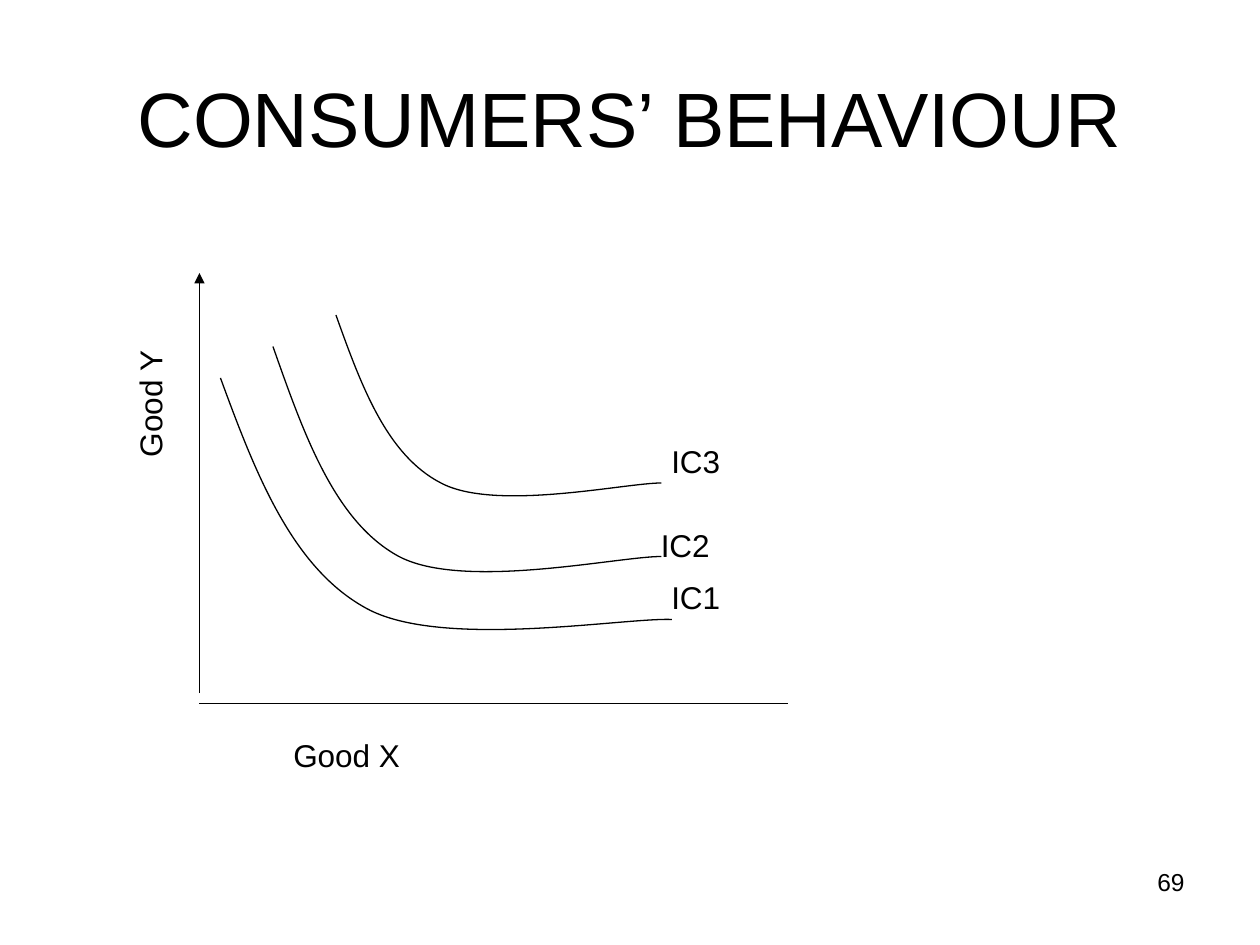
from pptx import Presentation
from pptx.util import Emu, Pt
from pptx.dml.color import RGBColor
from pptx.enum.shapes import MSO_CONNECTOR
from pptx.enum.text import PP_ALIGN, MSO_ANCHOR, MSO_AUTO_SIZE
from pptx.oxml.ns import qn
from lxml.etree import SubElement

SCALE = 914400 // 144
COLORS = {"ink": "000000", "paper": "FFFFFF"}


def px(n):
    return Emu(n * SCALE)


def style_line(sp):
    sp.line.color.rgb = RGBColor.from_string(COLORS["ink"])
    sp.line.width = Pt(0.75)


prs = Presentation()
prs.slide_width, prs.slide_height = px(1440), px(1080)
s = prs.slides.add_slide(prs.slide_layouts[6])
s.background.fill.solid()
s.background.fill.fore_color.rgb = RGBColor.from_string(COLORS["paper"])

texts = [
    ("69", 1032, 984, 336, 75, 14, PP_ALIGN.RIGHT, MSO_ANCHOR.TOP, True, 0),
    ("CONSUMERS’ BEHAVIOUR", 72, 43, 1296, 180, 44, PP_ALIGN.CENTER, MSO_ANCHOR.MIDDLE, True, 0),
]
labels = [
    ("IC1", 753, 654, 85, 0),
    ("IC2", 741, 594, 85, 0),
    ("IC3", 753, 498, 85, 0),
    ("Good X", 321, 834, 151, 0),
    ("Good Y", 96, 432, 151, 270),
]
for text, x, y, w, angle in labels:
    texts.append((text, x, y, w, 58, 18, PP_ALIGN.LEFT, MSO_ANCHOR.TOP, False, angle))

for text, x, y, w, h, size, align, anchor, wrap, angle in texts:
    sp = s.shapes.add_textbox(px(x), px(y), px(w), px(h))
    sp.rotation = angle
    tf = sp.text_frame
    tf.word_wrap = wrap
    tf.vertical_anchor = anchor
    if not wrap:
        tf.auto_size = MSO_AUTO_SIZE.SHAPE_TO_FIT_TEXT
    p = tf.paragraphs[0]
    p.alignment = align
    r = p.add_run()
    r.text = text
    r.font.name = "Arial"
    r.font.size = Pt(size)
    r.font.color.rgb = RGBColor.from_string(COLORS["ink"])

curves = [
    [(252, 432), (292, 541), (334, 650), (420, 696), (506, 742), (711, 706), (768, 708)],
    [(312, 396), (347, 495), (382, 596), (456, 636), (530, 675), (706, 636), (756, 636)],
    [(384, 360), (413, 441), (442, 520), (504, 552), (566, 585), (714, 552), (756, 552)],
]
for curve in curves:
    fb = s.shapes.build_freeform(*curve[0], scale=SCALE)
    fb.add_line_segments(curve[1:], close=False)
    sp = fb.convert_to_shape()
    outline = next(sp._element.iter(qn("a:path")))
    segments = outline.findall(qn("a:lnTo"))
    for i in range(0, len(segments), 3):
        bezier = SubElement(outline, qn("a:cubicBezTo"))
        for segment in segments[i:i + 3]:
            bezier.append(segment[0])
            outline.remove(segment)
    sp.shadow.inherit = False
    sp.fill.background()
    style_line(sp)

axes = [(228, 804, 900, 804, False), (228, 792, 228, 312, True)]
for x1, y1, x2, y2, arrow in axes:
    sp = s.shapes.add_connector(MSO_CONNECTOR.STRAIGHT, px(x1), px(y1), px(x2), px(y2))
    style_line(sp)
    if arrow:
        SubElement(sp.line._get_or_add_ln(), qn("a:tailEnd"), type="triangle")
    SubElement(sp._element.spPr, qn("a:effectLst"))

prs.save("out.pptx")
